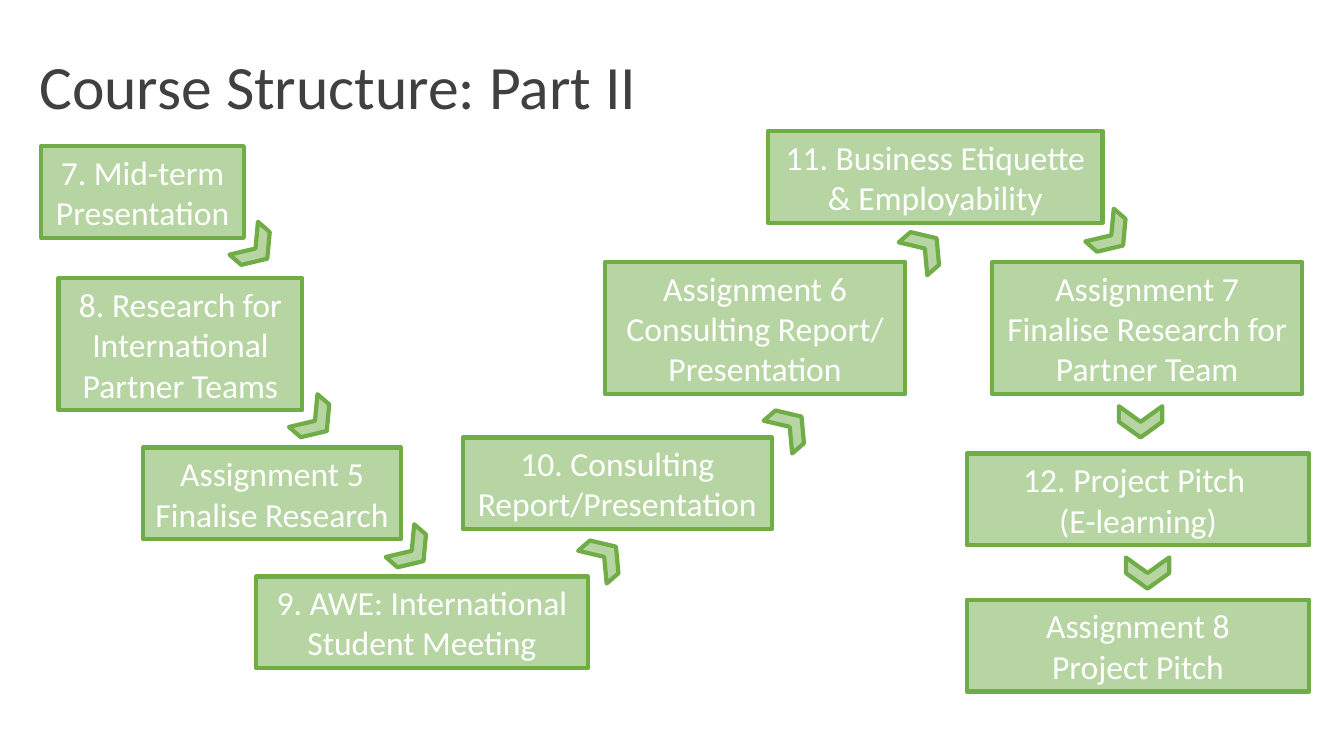
from lxml.etree import SubElement
from pptx import Presentation
from pptx.dml.color import RGBColor
from pptx.enum.shapes import MSO_SHAPE as Shape
from pptx.enum.text import MSO_ANCHOR as Anchor, MSO_AUTO_SIZE as Fit, PP_ALIGN as Align
from pptx.oxml.ns import qn
from pptx.util import Pt

GREEN, WHITE, GREY = "70AD47", "FFFFFF", "404041"
FONT = "Calibri"
DOWN, UP, DROP = 41, 319, 90  # chevron turns in degrees

# Steps: x, y, width, rows of text, text. Marks: centre x, centre y, turn.
DESCENT = [
    (0, 0, 144.7, 2, "7. Mid-term Presentation"),
    (12.3, 94.3, 174.2, 3, "8. Research for International Partner Teams"),
    (72.7, 215.3, 184.3, 2, "Assignment 5\nFinalise Research"),
    (153.4, 307.4, 236.9, 2, "9. AWE: International Student Meeting"),
]
DESCENT_MARKS = [(153, 73.1, DOWN), (195.5, 196.2, DOWN), (264.6, 289.1, DOWN)]

CLIMB = [
    (0, 218.9, 221, 2, "10. Consulting Report/Presentation"),
    (101.5, 93.6, 214.6, 3, "Assignment 6 Consulting Report/ Presentation"),
    (218.1, 0, 239, 2, "11. Business Etiquette & Employability"),
]
CLIMB_MARKS = [(101.1, 304.2, UP), (233.6, 211.3, UP), (330.1, 83.9, UP)]

FINISH = [
    (18, 0, 221.8, 3, "Assignment 7\nFinalise Research for Partner Team"),
    (0, 136.8, 244.8, 2, "12. Project Pitch \v(E-learning)"),
    (0, 241.2, 244.8, 2, "Assignment 8\nProject Pitch"),
]
FINISH_MARKS = [(103.3, -19.1, DOWN), (124.2, 114.1, DROP), (129.2, 222.1, DROP)]


def color(code):
    return RGBColor.from_string(code)


def style(para, size, code, align):
    para.alignment = align
    para.font.name = FONT
    para.font.size = Pt(size)
    para.font.color.rgb = color(code)


def block(slide, kind, x, y, w, h):
    """Add a half-clear green shape with a solid green edge."""
    shape = slide.shapes.add_shape(kind, Pt(x), Pt(y), Pt(w), Pt(h))
    shape.shadow.inherit = False
    shape.fill.solid()
    shape.fill.fore_color.rgb = color(GREEN)
    tint = shape.fill._xPr.find(f"{qn('a:solidFill')}/{qn('a:srgbClr')}")
    SubElement(tint, qn("a:alpha"), val="50000")
    shape.line.color.rgb = color(GREEN)
    shape.line.width = Pt(3)
    return shape


def step(slide, x, y, w, rows, text):
    frame = block(slide, Shape.RECTANGLE, x, y, w, 7.9 + 28.8 * rows).text_frame
    frame.word_wrap = True
    frame.auto_size = Fit.SHAPE_TO_FIT_TEXT
    frame.vertical_anchor = Anchor.MIDDLE
    frame.text = text
    for para in frame.paragraphs:
        style(para, 24, WHITE, Align.CENTER)


def mark(slide, x, y, turn):
    """Add a chevron centred on x, y."""
    w, h = 22.3, 31
    block(slide, Shape.CHEVRON, x - w / 2, y - h / 2, w, h).rotation = turn


def flow(slide, left, top, steps, marks):
    """Draw one leg of the course from its top left corner."""
    for x, y, *rest in steps:
        step(slide, left + x, top + y, *rest)
    for x, y, turn in marks:
        mark(slide, left + x, top + y, turn)


def head(slide, x, y, w, h, text):
    title = slide.shapes.title
    title.left, title.top, title.width, title.height = Pt(x), Pt(y), Pt(w), Pt(h)
    frame = title.text_frame
    frame.text = text
    frame.word_wrap = True
    frame.vertical_anchor = Anchor.MIDDLE
    para = frame.paragraphs[0]
    style(para, 44, GREY, Align.LEFT)
    para.line_spacing = 0.9


def main():
    deck = Presentation()
    deck.slide_width, deck.slide_height = Pt(960), Pt(540)
    slide = deck.slides.add_slide(deck.slide_layouts[5])
    head(slide, 20.9, 11.5, 828, 104.4, "Course Structure: Part II")
    flow(slide, 29.5, 104.4, DESCENT, DESCENT_MARKS)
    flow(slide, 330.5, 93.6, CLIMB, CLIMB_MARKS)
    flow(slide, 690.5, 187.2, FINISH, FINISH_MARKS)
    deck.save("out.pptx")


if __name__ == "__main__":
    main()
